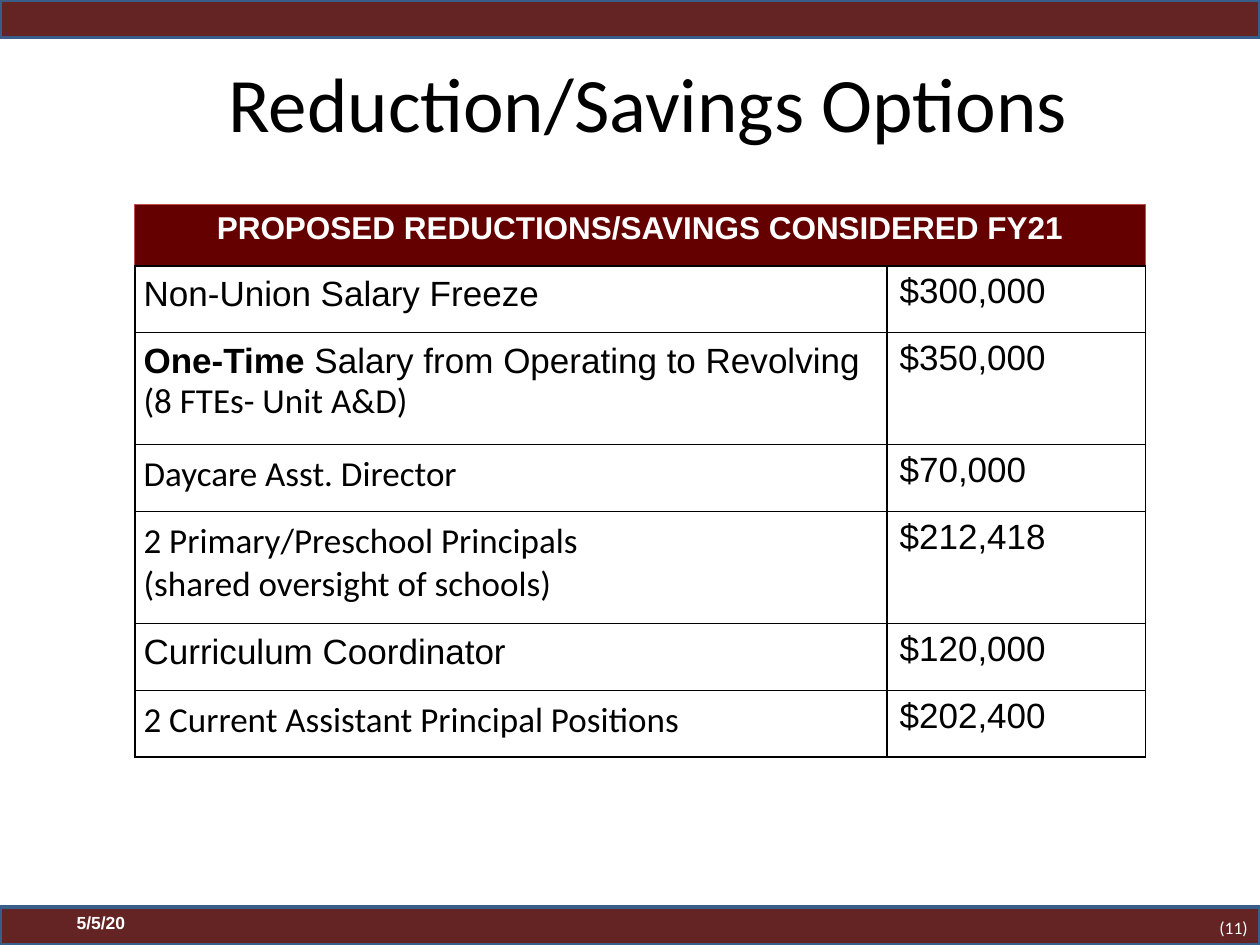
from dataclasses import dataclass

from lxml import etree
from pptx import Presentation
from pptx.dml.color import RGBColor
from pptx.enum.shapes import MSO_SHAPE
from pptx.enum.text import MSO_ANCHOR, PP_ALIGN
from pptx.oxml.ns import qn
from pptx.util import Inches, Pt


@dataclass(frozen=True)
class Theme:
    bar: str = "632423"
    bar_line: str = "395E89"
    header: str = "640000"
    header_line: str = "C0504D"
    ink: str = "000000"
    paper: str = "FFFFFF"
    heading: str = "Calibri"
    body: str = "Arial"
    title_size: int = 44
    header_size: int = 18
    cell_size: int = 20
    footer_size: int = 10


class SlideBuilder:
    def __init__(self, slide, theme):
        self.s, self.t = slide, theme

    def add_paragraphs(self, tf, paragraphs, size, color, align=PP_ALIGN.LEFT):
        """Each paragraph is a list of (text, font name, bold) runs."""
        for i, runs in enumerate(paragraphs):
            p = tf.add_paragraph() if i else tf.paragraphs[0]
            p.alignment = align
            for text, name, bold in runs:
                r = p.add_run()
                r.text = text
                values = {"name": name, "bold": bold, "size": Pt(size)}
                for key, value in values.items():
                    setattr(r.font, key, value)
                r.font.color.rgb = RGBColor.from_string(color)

    def set_margins(self, target, x, y):
        margins = {"margin_left": x, "margin_right": x,
                   "margin_top": y, "margin_bottom": y}
        for key, value in margins.items():
            setattr(target, key, Inches(value))

    def bar(self, top):
        sp = self.s.shapes.add_shape(MSO_SHAPE.RECTANGLE, 0, Inches(top),
                                     Inches(10), Inches(0.3))
        sp.shadow.inherit = False
        sp.fill.solid()
        sp.fill.fore_color.rgb = RGBColor.from_string(self.t.bar)
        sp.line.color.rgb = RGBColor.from_string(self.t.bar_line)
        sp.line.width = Pt(2)

    def text(self, box, run, size, color, align=PP_ALIGN.LEFT,
             anchor=MSO_ANCHOR.TOP, margins=(0.1, 0.05)):
        tf = self.s.shapes.add_textbox(*map(Inches, box)).text_frame
        tf.word_wrap = True
        tf.vertical_anchor = anchor
        self.set_margins(tf, *margins)
        self.add_paragraphs(tf, [[run]], size, color, align)

    def borders(self, cell, edges):
        tc_pr = cell._tc.get_or_add_tcPr()
        for side in "LRTB":
            color, width = edges[side]
            ln = etree.SubElement(tc_pr, qn(f"a:ln{side}"), w=str(Pt(width)))
            fill = etree.SubElement(ln, qn("a:solidFill"))
            etree.SubElement(fill, qn("a:srgbClr"), val=color)

    def table(self, left, top, widths, heights, header, rows):
        t = self.t
        tbl = self.s.shapes.add_table(
            len(heights), len(widths), Inches(left), Inches(top),
            Inches(sum(widths)), Inches(sum(heights))).table
        tbl.first_row = tbl.horz_banding = False
        for col, width in zip(tbl.columns, widths):
            col.width = Inches(width)
        for row, height in zip(tbl.rows, heights):
            row.height = Inches(height)

        # Header across both columns
        black = dict.fromkeys("LRTB", (t.ink, 1))
        header_edges = black | dict.fromkeys("LRT", (t.header_line, 0.75))
        tbl.cell(0, 0).merge(tbl.cell(0, len(widths) - 1))
        for cell in tbl.rows[0].cells:
            self.borders(cell, header_edges)
            cell.fill.solid()
            cell.fill.fore_color.rgb = RGBColor.from_string(t.header)
        self.set_margins(tbl.cell(0, 0), 0.1, 0.05)
        self.add_paragraphs(tbl.cell(0, 0).text_frame,
                            [[(header, t.body, True)]],
                            t.header_size, t.paper, PP_ALIGN.CENTER)

        # Item and amount rows
        margins = ((0.07, 0.07), (0.1, 0.05))
        for i, (item, amount) in enumerate(rows, start=1):
            contents = (item, [[(amount, t.body, False)]])
            for j, (content, margin) in enumerate(zip(contents, margins)):
                cell = tbl.cell(i, j)
                self.set_margins(cell, *margin)
                self.borders(cell, black)
                cell.fill.background()
                self.add_paragraphs(cell.text_frame, content,
                                    t.cell_size, t.ink)


def main():
    prs = Presentation()
    prs.slide_width, prs.slide_height = Inches(10), Inches(7.5)
    t = Theme()
    b = SlideBuilder(prs.slides.add_slide(prs.slide_layouts[6]), t)

    # Top and bottom bars
    for top in (0, 7.2):
        b.bar(top)

    # Title
    b.text((0.71, 0.18, 8.87, 1.25),
           ("Reduction/Savings Options", t.heading, False),
           t.title_size, t.ink, PP_ALIGN.CENTER, MSO_ANCHOR.MIDDLE)

    # Reductions table
    rows = [
        ([[("Non-Union Salary Freeze", t.body, False)]], "$300,000"),
        ([[("One-Time", t.body, True),
           (" Salary from Operating to Revolving", t.body, False)],
          [("(8 FTEs- Unit A&D)", t.heading, False)]], "$350,000"),
        ([[("Daycare Asst. Director", t.heading, False)]], "$70,000"),
        ([[("2 Primary/Preschool Principals", t.heading, False)],
          [("(shared oversight of schools)", t.heading, False)]], "$212,418"),
        ([[("Curriculum Coordinator", t.body, False)]], "$120,000"),
        ([[("2 Current Assistant Principal Positions", t.heading, False)]],
         "$202,400"),
    ]
    heights = [0.49] + [0.89 if len(item) > 1 else 0.53 for item, _ in rows]
    b.table(1.07, 1.62, (5.97, 2.05), heights,
            "PROPOSED REDUCTIONS/SAVINGS CONSIDERED FY21", rows)

    # Footer: page number and date
    b.text((9.58, 7.19, 0.5, 0.32), ("(11)", t.heading, False),
           t.footer_size, t.paper, margins=(0.1, 0.1))
    b.text((0.51, 7.19, 2.33, 0.4), ("5/5/20", t.body, True),
           t.footer_size, t.paper)

    prs.save("out.pptx")


if __name__ == "__main__":
    main()
